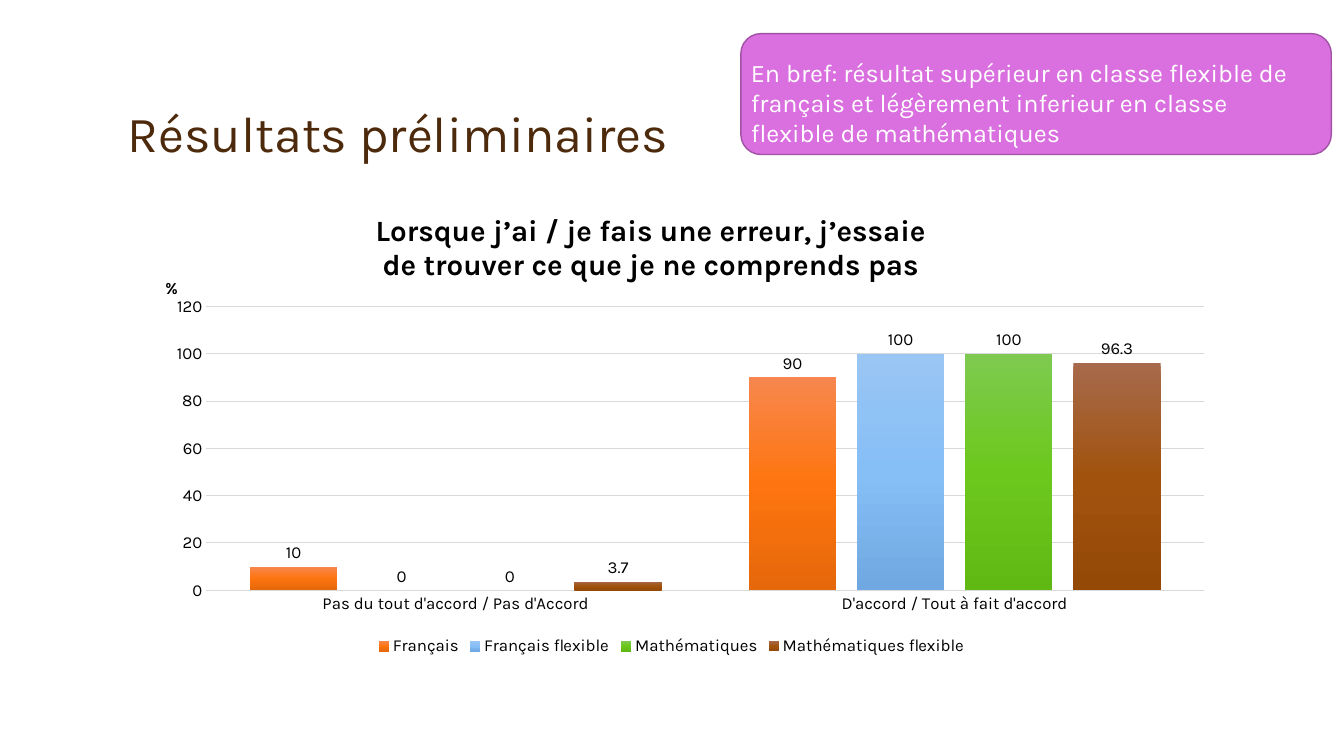
from dataclasses import dataclass

from lxml.etree import SubElement
from pptx import Presentation
from pptx.chart.data import CategoryChartData
from pptx.dml.color import RGBColor
from pptx.enum.chart import XL_CHART_TYPE, XL_LABEL_POSITION, XL_LEGEND_POSITION, XL_TICK_MARK
from pptx.enum.shapes import MSO_SHAPE
from pptx.enum.text import MSO_ANCHOR, PP_ALIGN
from pptx.oxml import parse_xml
from pptx.oxml.ns import nsdecls, qn
from pptx.util import Inches, Pt

COLUMNS, ROWS = 160, 90


@dataclass(frozen=True)
class Theme:
    font: str = "Karla"
    heading: str = "4D2A0B"
    ink: str = "000000"
    white: str = "FFFFFF"
    callout: str = "DA6FDF"
    callout_edge: str = "A152A5"
    grid: str = "D9D9D9"
    bars: tuple = (("F7874E", "FE750F", "E5680A"), ("9AC6F4", "86BEF6", "70A9E1"),
                   ("7ECA50", "6CC81D", "60B813"), ("A76A4C", "A1530E", "954907"))
    heading_size: int = 36
    chart_title_size: int = 21
    body_size: int = 18
    label_size: int = 12


def style_font(font, theme, size, color, bold=False):
    font.name, font.size, font.bold = theme.font, Pt(size), bold
    font.color.rgb = RGBColor.from_string(color)


def write(frame, text, *, theme, size, color, bold=False, align=PP_ALIGN.LEFT, spacing=None):
    for index, line in enumerate(text.split("\n")):
        paragraph = frame.add_paragraph() if index else frame.paragraphs[0]
        paragraph.alignment = align
        if spacing:
            paragraph.line_spacing = spacing
        run = paragraph.add_run()
        run.text = line
        style_font(run.font, theme, size, color, bold)


def place(parent, index, **shares):
    """Give a chart part a fixed place, in shares of the chart's size."""
    for old in parent.findall(qn("c:layout")):
        parent.remove(old)
    layout = parse_xml(f"<c:layout {nsdecls('c')}/>")
    parent.insert(index, layout)
    manual = SubElement(layout, qn("c:manualLayout"))
    settings = {"xMode": "edge", "yMode": "edge", **shares}
    if "w" in shares:
        settings = {"layoutTarget": "inner", **settings}
    for tag, value in settings.items():
        SubElement(manual, qn(f"c:{tag}")).set("val", str(value))


def shade(properties, colors):
    """Fill with a gradient running from top to bottom."""
    stops = "".join(f'<a:gs pos="{i * 50000}"><a:srgbClr val="{color}"/></a:gs>'
                    for i, color in enumerate(colors))
    properties.insert(0, parse_xml(f'<a:gradFill {nsdecls("a")} rotWithShape="1"><a:gsLst>{stops}'
                                   '</a:gsLst><a:lin ang="5400000" scaled="0"/></a:gradFill>'))


class SlideBuilder:
    def __init__(self, presentation, theme):
        self.theme = theme
        self.cell = presentation.slide_width / COLUMNS, presentation.slide_height / ROWS
        self.slide = presentation.slides.add_slide(presentation.slide_layouts[6])

    def area(self, column, row, columns, rows):
        across, down = self.cell
        return [round(n) for n in (column * across, row * down, columns * across, rows * down)]

    def text(self, area, text, anchor=MSO_ANCHOR.TOP, **style):
        frame = self.slide.shapes.add_textbox(*self.area(*area)).text_frame
        frame.word_wrap = True
        frame.vertical_anchor = anchor
        write(frame, text, theme=self.theme, **style)

    def panel(self, area, fill, edge):
        panel = self.slide.shapes.add_shape(MSO_SHAPE.ROUNDED_RECTANGLE, *self.area(*area))
        panel.shadow.inherit = False
        panel.fill.solid()
        panel.fill.fore_color.rgb = RGBColor.from_string(fill)
        panel.line.color.rgb = RGBColor.from_string(edge)
        panel.line.width = Pt(1)

    def bar_chart(self, area, title, unit, categories, results):
        theme = self.theme
        data = CategoryChartData()
        data.categories = categories
        for name, values in results.items():
            data.add_series(name, values)
        chart = self.slide.shapes.add_chart(
            XL_CHART_TYPE.COLUMN_CLUSTERED, *self.area(*area), data).chart
        small = dict(theme=theme, size=theme.label_size, color=theme.ink)
        style_font(chart.font, **small)

        # Title and legend
        write(chart.chart_title.text_frame, title, theme=theme, size=theme.chart_title_size,
              color=theme.ink, bold=True, align=PP_ALIGN.CENTER)
        chart.has_legend = True
        chart.legend.position = XL_LEGEND_POSITION.BOTTOM
        chart.legend.include_in_layout = False
        style_font(chart.legend.font, **small)

        # Axes
        answers, percent = chart.category_axis, chart.value_axis
        for axis in (answers, percent):
            axis.major_tick_mark = axis.minor_tick_mark = XL_TICK_MARK.NONE
            style_font(axis.tick_labels.font, **small)
        percent.minimum_scale, percent.maximum_scale, percent.major_unit = 0, 120, 20
        percent.format.line.fill.background()
        for line in (answers.format.line, percent.major_gridlines.format.line):
            line.color.rgb = RGBColor.from_string(theme.grid)
            line.width = Pt(0.75)
        write(percent.axis_title.text_frame, unit, bold=True, **small)

        # Places of the titles and the plot
        root = chart.element
        place(root.xpath("c:chart/c:title")[0], 1, x=0.23, y=0.03)
        place(root.xpath("c:chart/c:plotArea")[0], 0, x=0.08, y=0.24, w=0.9, h=0.61)
        unit_title = root.xpath(".//c:valAx/c:title")[0]
        place(unit_title, 1, x=0.04, y=0.17)
        unit_body = unit_title.find(".//" + qn("a:bodyPr"))
        unit_body.set("rot", "0")
        unit_body.set("vert", "horz")

        # Bars and their values
        plot = chart.plots[0]
        plot.vary_by_categories = False
        plot.gap_width, plot.overlap = 100, -24
        for series, bars, colors in zip(plot.series, root.xpath(".//c:ser"), theme.bars):
            series.invert_if_negative = False
            shade(bars.get_or_add_spPr(), colors)
            labels = series.data_labels
            labels.show_value = True
            labels.position = XL_LABEL_POSITION.OUTSIDE_END
            style_font(labels.font, **small)


def main():
    presentation = Presentation()
    presentation.slide_width, presentation.slide_height = Inches(13.33), Inches(7.5)
    theme = Theme()
    slide = SlideBuilder(presentation, theme)

    # Heading
    slide.text((14, 4, 132, 16), "Résultats préliminaires", anchor=MSO_ANCHOR.BOTTOM,
               size=theme.heading_size, color=theme.heading, spacing=0.9)

    # Survey answers
    slide.bar_chart(
        (14, 23.2, 132, 55.4),
        "Lorsque j’ai / je fais une erreur, j’essaie\nde trouver ce que je ne comprends pas",
        "%",
        ["Pas du tout d'accord / Pas d'Accord", "D'accord / Tout à fait d'accord"],
        {"Français": (10, 90), "Français flexible": (0, 100),
         "Mathématiques": (0, 100), "Mathématiques flexible": (3.7, 96.3)})

    # Summary callout
    slide.panel((88.2, 4, 70.3, 14.4), theme.callout, theme.callout_edge)
    slide.text((88.2, 6.2, 69.1, 12.1),
               "En bref: résultat supérieur en classe flexible de français et légèrement "
               "inferieur en classe flexible de mathématiques",
               size=theme.body_size, color=theme.white)

    presentation.save("out.pptx")


if __name__ == "__main__":
    main()
